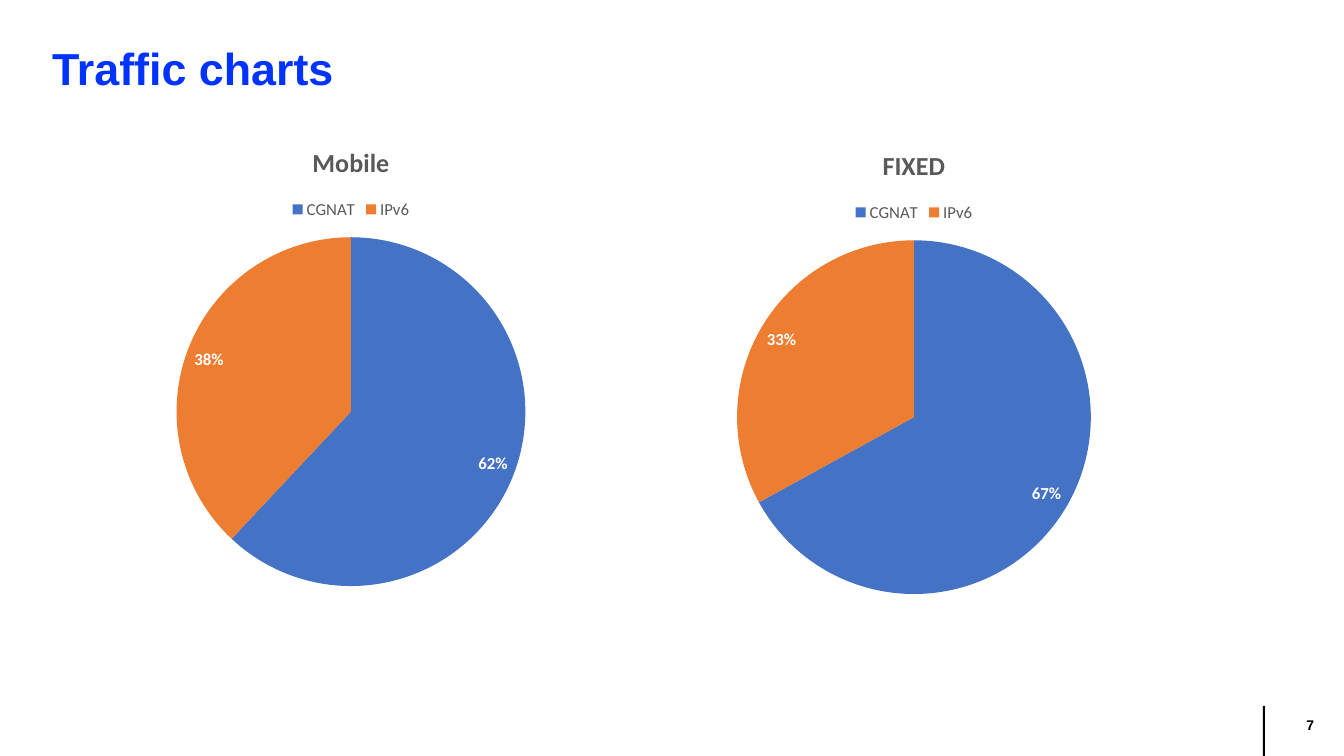
import pptx
import pptx.chart.data
import pptx.dml.color
import pptx.enum.chart
import pptx.enum.shapes
import pptx.enum.text
import pptx.util

PX = 914400 / 100.8
CATEGORIES = ("CGNAT", "IPv6")
SLICE_COLOURS = ("4472C4", "ED7D31")
TRAFFIC = (
    ("Mobile", (62, 38), (-5, 125, 712, 475)),
    ("FIXED", (67, 33), (551, 128, 726, 480)),
)


def px(length):
    return pptx.util.Emu(round(length * PX))


def colour(value):
    return pptx.dml.color.RGBColor.from_string(value)


def style_font(font, size, value, name, bold=False):
    formats = {"size": pptx.util.Pt(size), "name": name, "bold": bold}
    for attribute, setting in formats.items():
        setattr(font, attribute, setting)
    font.color.rgb = colour(value)


def fill_text(box, text, size, value, align):
    frame = box.text_frame
    frame.word_wrap = True
    frame.vertical_anchor = pptx.enum.text.MSO_ANCHOR.MIDDLE
    frame.text = text
    paragraph = frame.paragraphs[0]
    paragraph.alignment = align
    style_font(paragraph.runs[0].font, size, value, "Arial", True)
    return paragraph


def add_heading(slide, text):
    heading = slide.shapes.title
    place = {"left": 42, "top": 25, "width": 1159, "height": 93}
    for attribute, length in place.items():
        setattr(heading, attribute, px(length))
    paragraph = fill_text(heading, text, 32, "0033FF", pptx.enum.text.PP_ALIGN.LEFT)
    paragraph.line_spacing = 0.9


def add_page_mark(slide, number):
    bar = slide.shapes.add_shape(
        pptx.enum.shapes.MSO_SHAPE.RECTANGLE, *map(px, (1263, 706, 2, 50)))
    bar.shadow.inherit = False
    bar.fill.solid()
    bar.fill.fore_color.rgb = colour("000000")
    bar.line.fill.background()
    page = slide.shapes.add_textbox(*map(px, (1022, 705, 302, 40)))
    fill_text(page, number, 10, "000000", pptx.enum.text.PP_ALIGN.RIGHT)


def add_traffic_pie(slide, name, shares, place):
    data = pptx.chart.data.CategoryChartData()
    data.categories = CATEGORIES
    data.add_series(name, shares)
    pie = slide.shapes.add_chart(
        pptx.enum.chart.XL_CHART_TYPE.PIE, *map(px, place), data).chart
    style_font(pie.font, 10, "000000", "Calibri")

    # Title and legend
    pie.has_title = True
    pie.chart_title.include_in_layout = False
    caption = pie.chart_title.text_frame
    caption.text = name
    caption_font = caption.paragraphs[0].runs[0].font
    style_font(caption_font, 18.6, "595959", "Calibri", True)
    pie.has_legend = True
    pie.legend.position = pptx.enum.chart.XL_LEGEND_POSITION.TOP
    pie.legend.include_in_layout = False
    style_font(pie.legend.font, 12, "595959", "Calibri")

    # Slices and their percentages
    plot = pie.plots[0]
    plot.vary_by_categories = True
    for index, value in enumerate(SLICE_COLOURS):
        fill = plot.series[0].points[index].format.fill
        fill.solid()
        fill.fore_color.rgb = colour(value)
    labels = plot.series[0].data_labels
    formats = {
        "show_percentage": True,
        "show_value": False,
        "number_format": "0%",
        "number_format_is_linked": False,
        "position": pptx.enum.chart.XL_LABEL_POSITION.INSIDE_END,
    }
    for attribute, setting in formats.items():
        setattr(labels, attribute, setting)
    style_font(labels.font, 12, "FFFFFF", "Calibri", True)


def main():
    deck = pptx.Presentation()
    deck.slide_width, deck.slide_height = px(1344), px(756)
    slide = deck.slides.add_slide(deck.slide_layouts.get_by_name("Title Only"))
    add_page_mark(slide, "7")
    add_heading(slide, "Traffic charts")
    for name, shares, place in TRAFFIC:
        add_traffic_pie(slide, name, shares, place)
    deck.save("out.pptx")


if __name__ == "__main__":
    main()
